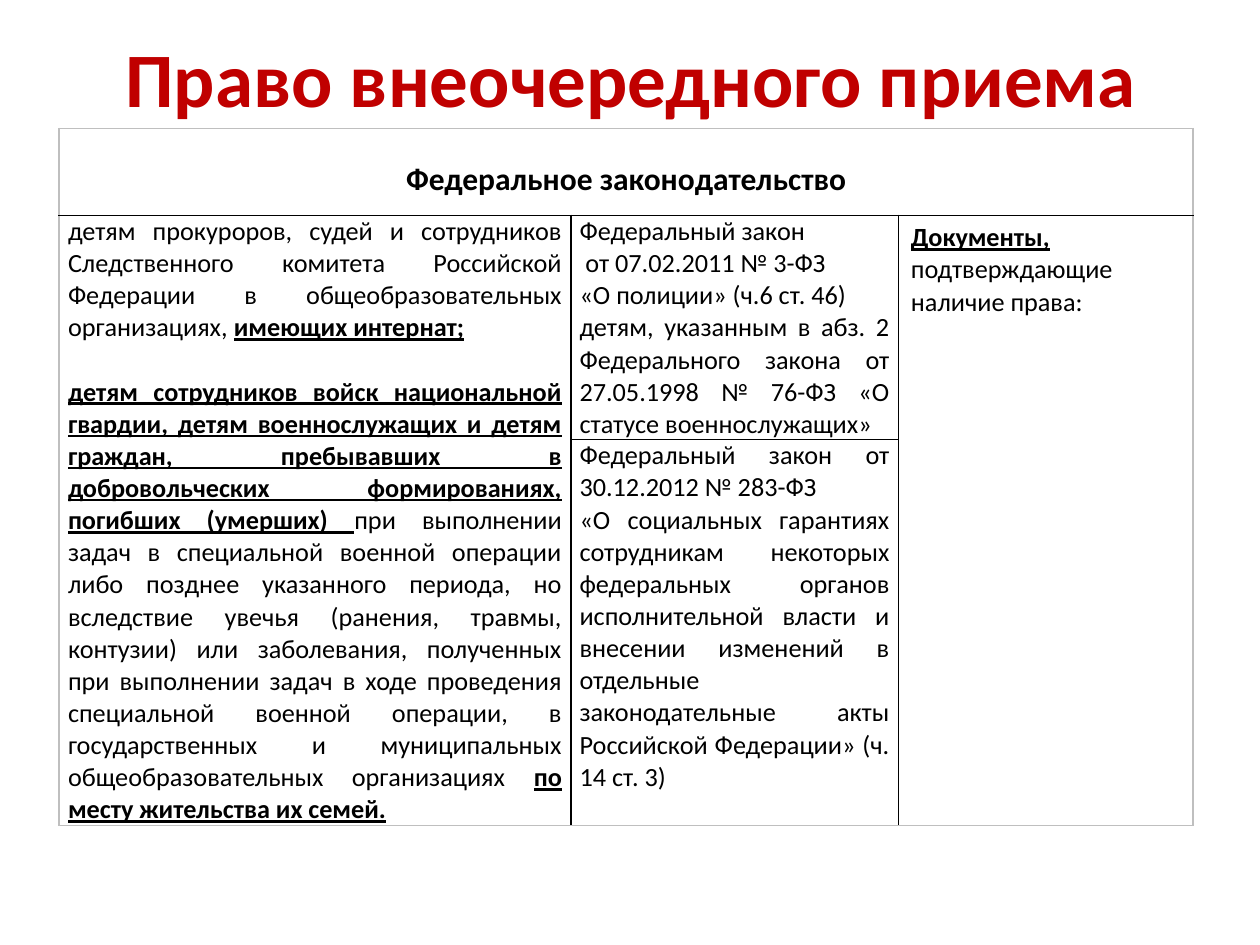
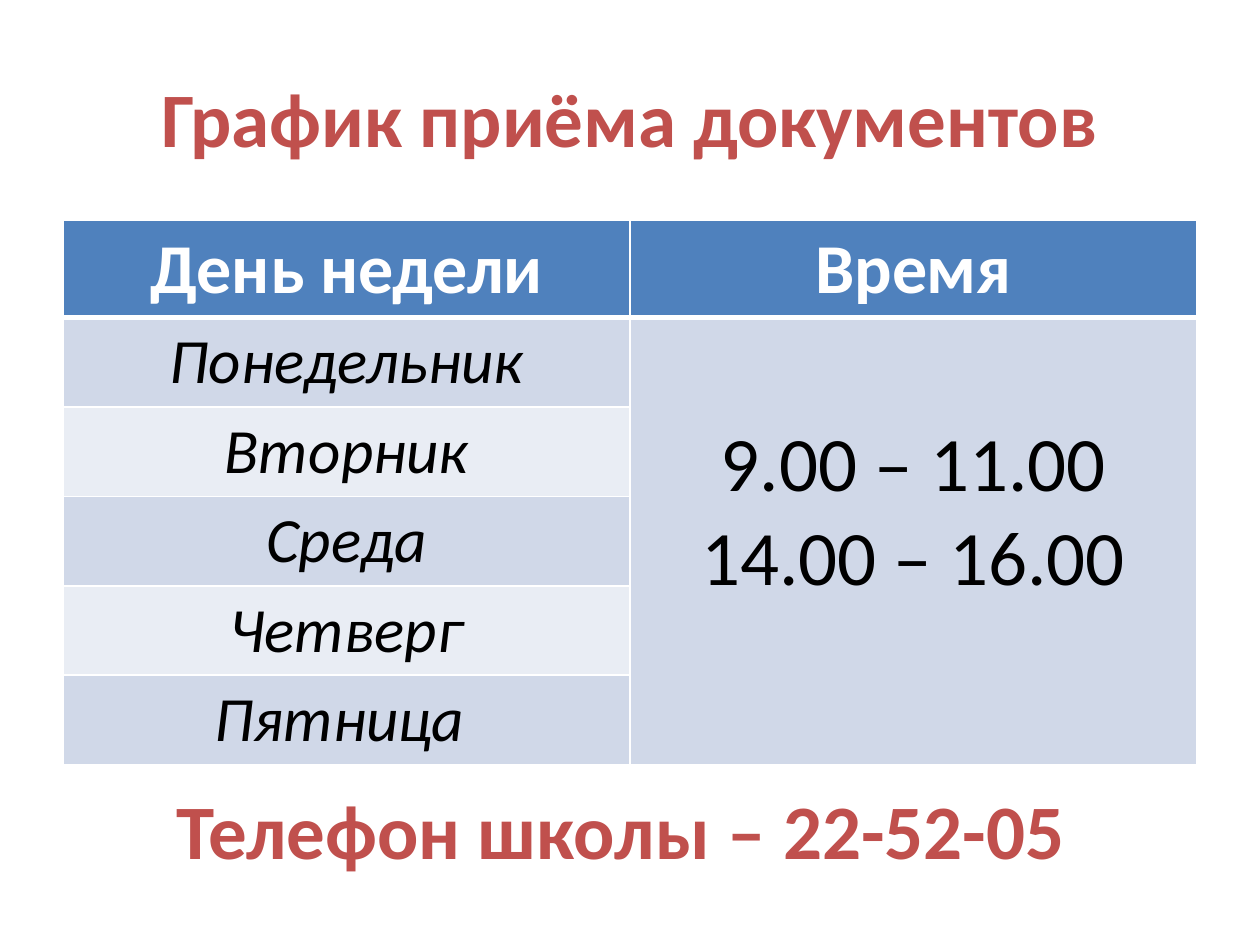
from dataclasses import dataclass
from typing import Optional

from lxml import etree
from pptx import Presentation
from pptx import util as u
from pptx.dml.color import RGBColor
from pptx.enum import text
from pptx.oxml.ns import qn

BLACK = RGBColor(0x00, 0x00, 0x00)
WHITE = RGBColor(0xFF, 0xFF, 0xFF)
GREY = RGBColor(0xBF, 0xBF, 0xBF)
CRIMSON = RGBColor(0xC0, 0x00, 0x00)
BRICK = RGBColor(0xC0, 0x50, 0x4D)
BLUE = RGBColor(0x4F, 0x81, 0xBD)
BANDS = RGBColor(0xD0, 0xD8, 0xE8), RGBColor(0xE9, 0xED, 0xF4)
PLAIN_TABLE = "{2D5ABB26-0587-4C30-8999-92F81FD0307C}"
CENTER, JUSTIFY, LEFT = (
    text.PP_ALIGN.CENTER, text.PP_ALIGN.JUSTIFY, text.PP_ALIGN.LEFT)


@dataclass
class Look:
    size: float
    color: RGBColor = BLACK
    bold: bool = False
    italic: bool = False
    align: int = CENTER


@dataclass
class Entry:
    row: int
    column: int
    paras: list
    look: Look
    rows: int = 1
    columns: int = 1
    fill: Optional[RGBColor] = None
    margins: tuple = (1, 0.5)
    top: Optional[float] = None
    gaps: tuple = ()


class Sheet:
    font = "Calibri"
    columns, rows = 100, 75

    def __init__(self):
        self.deck = Presentation()
        self.deck.slide_width, self.deck.slide_height = u.Inches(10), u.Inches(7.5)
        self.page = None

    def add_page(self):
        self.page = self.deck.slides.add_slide(self.deck.slide_layouts[6])

    def across(self, count):
        return round(self.deck.slide_width * count / self.columns)

    def down(self, count):
        return round(self.deck.slide_height * count / self.rows)

    def place(self, left, top, width, height):
        return self.across(left), self.down(top), self.across(width), self.down(height)

    def set_words(self, frame, paras, look, gaps=()):
        frame.word_wrap = True
        for index, words in enumerate(paras):
            para = frame.paragraphs[0] if index == 0 else frame.add_paragraph()
            para.alignment = look.align
            if index in gaps:
                para.space_before = u.Pt(look.size * 1.22)
            for part, piece in enumerate(words.split("|")):
                if piece:
                    span = para.add_run()
                    span.text = piece
                    font = span.font
                    font.name, font.size = self.font, u.Pt(look.size)
                    font.color.rgb, font.italic = look.color, look.italic
                    font.bold = look.bold or part % 2 == 1
                    font.underline = part % 2 == 1

    def headline(self, words, color, left, top, height):
        box = self.page.shapes.add_textbox(*self.place(left, top, 90, height))
        box.text_frame.vertical_anchor = text.MSO_ANCHOR.MIDDLE
        self.set_words(box.text_frame, [words], Look(44, color, bold=True))

    def edge(self, cell, side, pen):
        color, width = pen
        line = etree.SubElement(
            cell._tc.get_or_add_tcPr(), qn(f"a:ln{side}"), w=str(u.Pt(width)))
        fill = etree.SubElement(line, qn("a:solidFill"))
        etree.SubElement(fill, qn("a:srgbClr"), val=str(color))

    def border(self, grid, entry, frame, inner, header):
        last_row, last_column = len(grid.rows), len(grid.columns)
        bottom, right = entry.row + entry.rows, entry.column + entry.columns
        pens = {
            "L": frame if entry.column == 0 else inner,
            "R": frame if right == last_column else inner,
            "T": (frame, header)[entry.row] if entry.row < 2 else inner,
            "B": header if bottom == 1 else frame if bottom == last_row else inner,
        }
        for row in range(entry.row, bottom):
            for column in range(entry.column, right):
                origin = (row, column) == (entry.row, entry.column)
                outside = {"L": column == entry.column, "R": column == right - 1,
                           "T": row == entry.row, "B": row == bottom - 1}
                for side, pen in pens.items():
                    if origin or outside[side]:
                        self.edge(grid.cell(row, column), side, pen)

    def table(self, left, top, widths, heights, entries, frame, inner, header):
        area = self.place(left, top, sum(widths), sum(heights))
        grid = self.page.shapes.add_table(len(heights), len(widths), *area).table
        grid.first_row = grid.horz_banding = False
        grid._tbl.tblPr.find(qn("a:tableStyleId")).text = PLAIN_TABLE
        for column, width in zip(grid.columns, widths):
            column.width = self.across(width)
        for row, height in zip(grid.rows, heights):
            row.height = self.down(height)
        for entry in entries:
            cell = grid.cell(entry.row, entry.column)
            if entry.rows * entry.columns > 1:
                cell.merge(grid.cell(entry.row + entry.rows - 1,
                                     entry.column + entry.columns - 1))
            side, end = entry.margins
            cell.margin_left = cell.margin_right = self.across(side)
            cell.margin_bottom = self.down(end)
            cell.margin_top = self.down(end if entry.top is None else entry.top)
            self.set_words(cell.text_frame, entry.paras, entry.look, entry.gaps)
            self.border(grid, entry, frame, inner, header)
            if entry.fill is None:
                cell.fill.background()
            else:
                cell.fill.solid()
                cell.fill.fore_color.rgb = entry.fill


def admission_rights(sheet):
    sheet.add_page()
    sheet.headline("Право внеочередного приема", CRIMSON, 5.1, 1.3, 9.5)
    body, tight = Look(15, align=JUSTIFY), (0.7, 0)
    children = [
        "детям прокуроров, судей и сотрудников Следственного комитета Российской "
        "Федерации в общеобразовательных организациях, |имеющих интернат;",
        "|детям сотрудников войск национальной гвардии, детям военнослужащих и детям "
        "граждан, пребывавших в добровольческих формированиях, погибших (умерших) "
        "|при выполнении задач в специальной военной операции либо позднее указанного "
        "периода, но вследствие увечья (ранения, травмы, контузии) или заболевания, "
        "полученных при выполнении задач в ходе проведения специальной военной "
        "операции, в государственных и муниципальных общеобразовательных "
        "организациях |по месту жительства их семей.",
    ]
    police_law = [
        "Федеральный закон",
        " от 07.02.2011 № 3-ФЗ",
        "«О полиции» (ч.6 ст. 46)",
        "детям, указанным в абз. 2 Федерального закона от 27.05.1998 № 76-ФЗ "
        "«О статусе военнослужащих»",
    ]
    guarantees_law = [
        "Федеральный закон от 30.12.2012 № 283-ФЗ",
        "«О социальных гарантиях сотрудникам некоторых федеральных органов "
        "исполнительной власти и внесении изменений в отдельные законодательные акты "
        "Российской Федерации» (ч. 14 ст. 3)",
    ]
    entries = [
        Entry(0, 0, ["Федеральное законодательство"], Look(18, bold=True),
              columns=3, margins=tight, top=2.5),
        Entry(1, 0, children, body, rows=2, margins=tight, gaps=(1,)),
        Entry(1, 1, police_law, body, margins=tight),
        Entry(1, 2, ["|Документы, |подтверждающие наличие права:"],
              Look(15, align=LEFT), rows=2),
        Entry(2, 1, guarantees_law, body, margins=tight),
    ]
    sheet.table(4.7, 10.2, [40.6, 26, 23.4], [6.9, 17.8, 30.6], entries,
                frame=(GREY, 1), inner=(BLACK, 1), header=(BLACK, 1))


def reception_hours(sheet):
    sheet.add_page()
    sheet.headline("График приёма документов", BRICK, 5, 3, 12.5)
    days = ["Понедельник", "Вторник", "Среда", "Четверг", "Пятница "]
    heading, day_look = Look(40, WHITE, bold=True), Look(36, italic=True)
    entries = [Entry(0, column, [words], heading, fill=BLUE)
               for column, words in enumerate(["День недели", "Время"])]
    entries += [Entry(row, 0, [day], day_look, fill=BANDS[(row - 1) % 2])
                for row, day in enumerate(days, 1)]
    entries.append(Entry(1, 1, ["9.00 – 11.00", "14.00 – 16.00"], Look(44),
                         rows=len(days), fill=BANDS[0], top=8))
    sheet.table(5, 17.5, [45, 45], [7.7] + [7.1] * len(days), entries,
                frame=(WHITE, 1), inner=(WHITE, 1), header=(WHITE, 3))
    sheet.headline("Телефон школы – 22-52-05", BRICK, 4.3, 59.5, 12.5)


def main():
    sheet = Sheet()
    admission_rights(sheet)
    reception_hours(sheet)
    sheet.deck.save("out.pptx")


if __name__ == "__main__":
    main()
